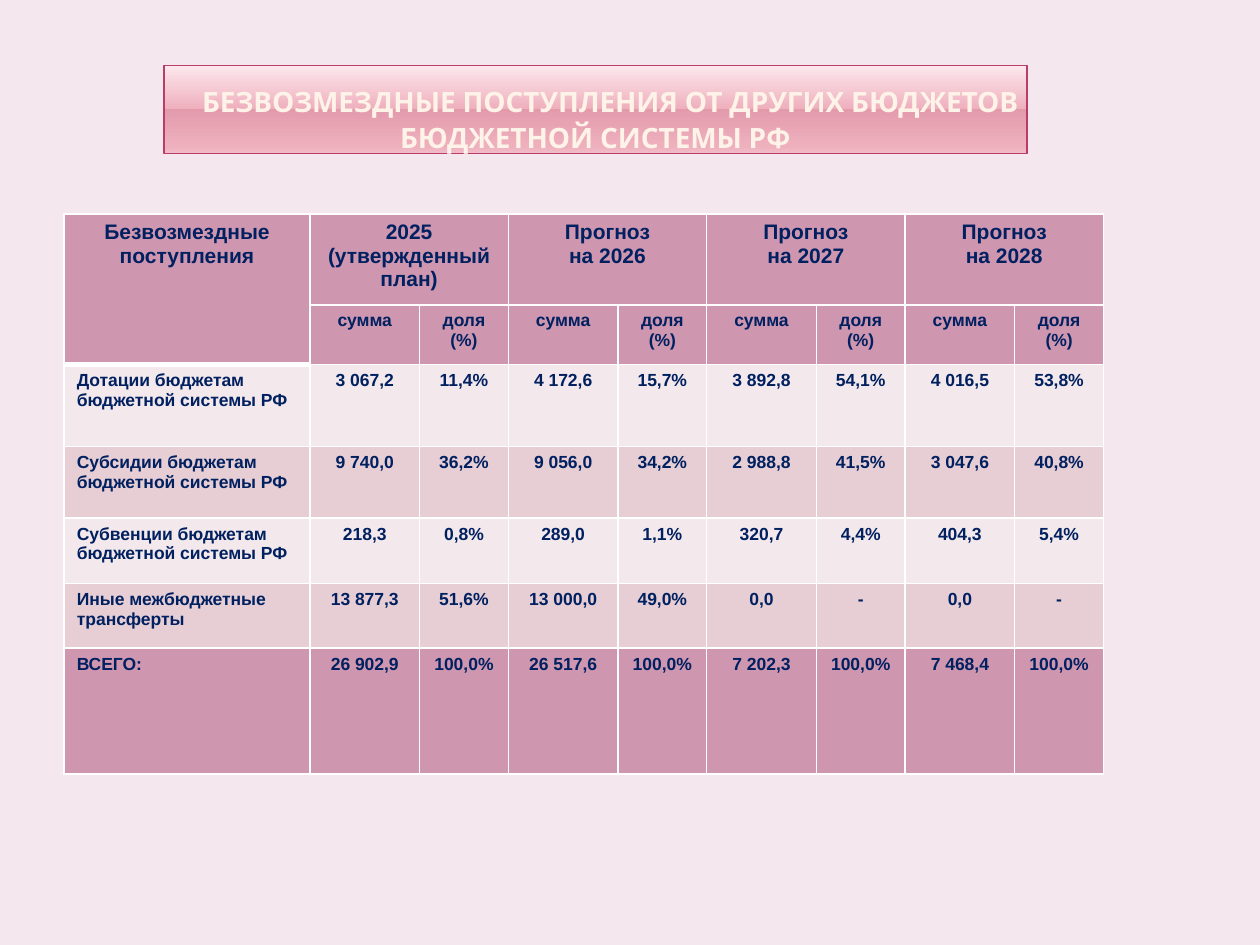
"""Build the slide on transfers from other budgets."""
import pptx
import pptx.dml.color
import pptx.enum.shapes
import pptx.enum.text
import pptx.oxml
import pptx.oxml.ns
import pptx.util
from pptx.util import Inches

TITLE = "БЕЗВОЗМЕЗДНЫЕ ПОСТУПЛЕНИЯ ОТ ДРУГИХ БЮДЖЕТОВ БЮДЖЕТНОЙ СИСТЕМЫ РФ"
BANNER = [(0, "FCE8ED"), (49, "EFB0BE"), (49, "E39BAC"), (92, "EFB0BE"), (100, "F0BEC9")]
LETTERS = [(0, "FEF7F1"), (10, "FEF3E8"), (49, "FBCF9C"), (50, "F9B94C"), (100, "FEF3E8")]
HEADING = "Безвозмездные поступления"
PERIODS = ["2025\n(утвержденный план)", "Прогноз\nна 2026", "Прогноз\nна 2027", "Прогноз\nна 2028"]
MEASURES = ["сумма", "доля (%)"] + ["сумма", "доля\n(%)"] * 3
ROWS = [
    ("Дотации бюджетам бюджетной системы РФ",
     "3 067,2", "11,4%", "4 172,6", "15,7%", "3 892,8", "54,1%", "4 016,5", "53,8%"),
    ("Субсидии бюджетам бюджетной системы РФ",
     "9 740,0", "36,2%", "9 056,0", "34,2%", "2 988,8", "41,5%", "3 047,6", "40,8%"),
    ("Субвенции бюджетам бюджетной системы РФ",
     "218,3", "0,8%", "289,0", "1,1%", "320,7", "4,4%", "404,3", "5,4%"),
    ("Иные межбюджетные трансферты",
     "13 877,3", "51,6%", "13 000,0", "49,0%", "0,0", "-", "0,0", "-"),
    ("ВСЕГО:",
     "26 902,9", "100,0%", "26 517,6", "100,0%", "7 202,3", "100,0%", "7 468,4", "100,0%"),
]
WIDTH, LABEL, SUM = 8.25, 1.95, 0.87
SHARE = (WIDTH - LABEL) / len(PERIODS) - SUM
COLS = [LABEL] + [SUM, SHARE] * len(PERIODS)
HEIGHTS = [0.72, 0.44, 0.65, 0.57, 0.52, 0.51, 1]
DARK, LIGHT, MEDIUM = "CF96B0", "F3E8EB", "E6CED4"
FILLS = [DARK, DARK, LIGHT, MEDIUM, LIGHT, MEDIUM, DARK]


def rgb(value):
    return pptx.dml.color.RGBColor.from_string(value)


def xml(text):
    return pptx.oxml.parse_xml(text.replace(" ", " " + pptx.oxml.ns.nsdecls("a") + " ", 1))


def shade(fill, parent, stops):
    fill.gradient()
    fill.gradient_angle = 270
    gs_list = parent.find(".//" + pptx.oxml.ns.qn("a:gsLst"))
    gs_list.clear()
    for pos, color in stops:
        gs_list.append(xml(f'<a:gs pos="{pos * 1000}"><a:srgbClr val="{color}"/></a:gs>'))


def write(tf, text, size=10, font="Arial", color="002060", stops=None, center=True):
    tf.text = text
    for p in tf.paragraphs:
        p.alignment = pptx.enum.text.PP_ALIGN.CENTER if center else pptx.enum.text.PP_ALIGN.LEFT
        for r in p.runs:
            r.font.size = pptx.util.Pt(size)
            r.font.name = font
            r.font.bold = True
            if stops:
                shade(r.font.fill, r._r, stops)
            else:
                r.font.color.rgb = rgb(color)


def border(cell, top=1, bottom=1):
    for side, width in (("L", 1), ("R", 1), ("T", top), ("B", bottom)):
        cell._tc.get_or_add_tcPr().append(xml(
            f'<a:ln{side} w="{width * 12700}"><a:solidFill><a:srgbClr val="FFFFFF"/>'
            f'</a:solidFill></a:ln{side}>'))


def add_title(s):
    sp = s.shapes.add_shape(pptx.enum.shapes.MSO_SHAPE.RECTANGLE,
                            Inches(1.3), Inches(0.52), Inches(6.85), Inches(0.7))
    shade(sp.fill, sp._element.spPr, BANNER)
    sp.line.color.rgb = rgb("B83D68")
    sp.line.width = pptx.util.Pt(0.9)
    sp.shadow.inherit = False
    tf = sp.text_frame
    tf.word_wrap = True
    tf.vertical_anchor = pptx.enum.text.MSO_ANCHOR.BOTTOM
    tf.margin_left = tf.margin_right = Inches(0.05)
    tf.margin_top = tf.margin_bottom = 0
    write(tf, TITLE, size=16, font="Karla", stops=LETTERS)
    p = tf.paragraphs[0]
    p.line_spacing = 1.05
    p._p.get_or_add_pPr().set("indent", str(Inches(0.24)))


def add_budget_table(s):
    table = s.shapes.add_table(len(HEIGHTS), len(COLS), Inches(0.51), Inches(1.7),
                               Inches(WIDTH), Inches(sum(HEIGHTS))).table
    for col, width in zip(table.columns, COLS):
        col.width = Inches(width)
    for row, height in zip(table.rows, HEIGHTS):
        row.height = Inches(height)
    periods = [text for period in PERIODS for text in (period, None)]
    for i, row in enumerate([[HEADING, *periods], [None, *MEASURES], *ROWS]):
        for j, text in enumerate(row):
            cell = table.cell(i, j)
            if text:
                write(cell.text_frame, text, size=12 if i == 0 else 10, center=i < 2 or j > 0)
            border(cell, top=3 if (i, j) == (2, 0) else 1, bottom=3 if i < 2 and j == 0 else 1)
            cell.fill.solid()
            cell.fill.fore_color.rgb = rgb(FILLS[i])
    table.cell(0, 0).merge(table.cell(1, 0))
    for j in range(1, len(COLS), 2):
        table.cell(0, j).merge(table.cell(0, j + 1))


def main():
    prs = pptx.Presentation()
    prs.slide_width, prs.slide_height = Inches(10), Inches(7.5)
    s = prs.slides.add_slide(prs.slide_layouts[6])
    s.background.fill.solid()
    s.background.fill.fore_color.rgb = rgb("F4E7ED")
    add_title(s)
    add_budget_table(s)
    prs.save("out.pptx")


if __name__ == "__main__":
    main()
